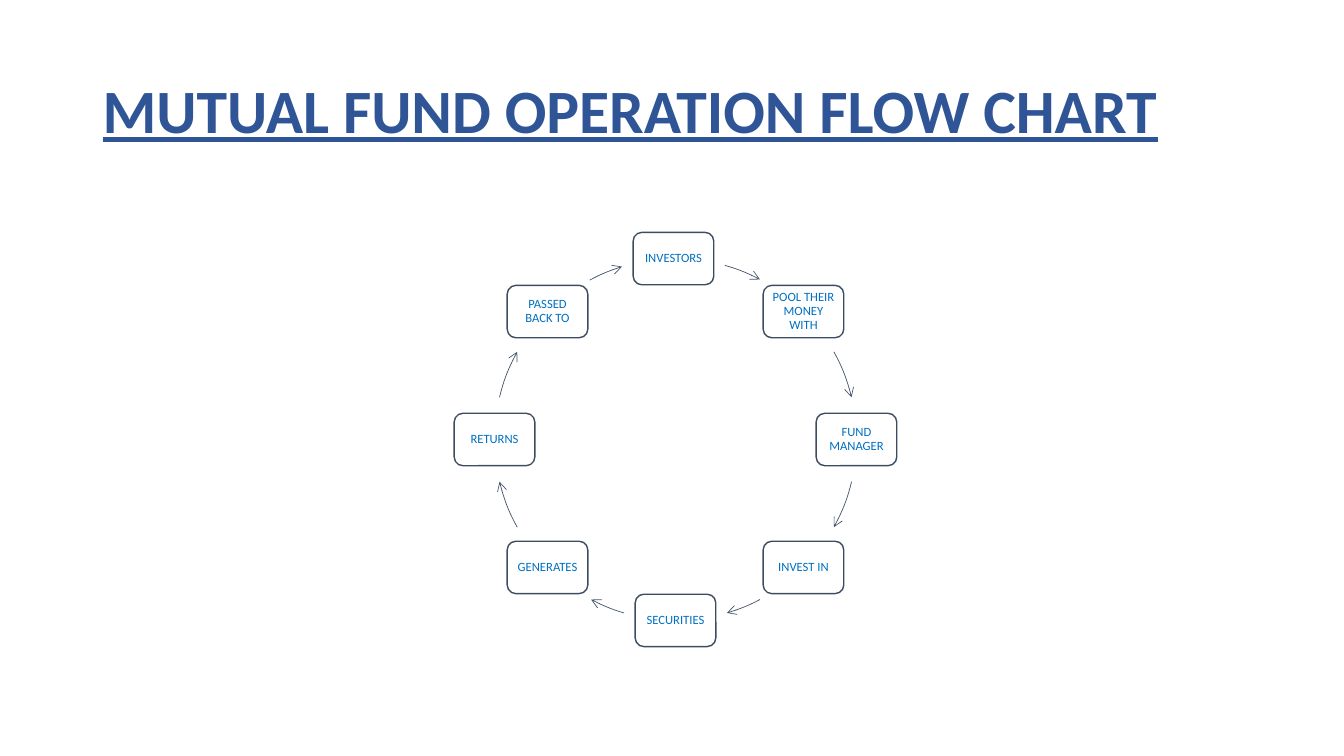
from dataclasses import dataclass
from math import cos, radians, sin

from lxml import etree
from pptx import Presentation
from pptx.dml.color import RGBColor
from pptx.enum import shapes, text
from pptx.oxml import ns
from pptx.util import Inches, Pt

COLORS = {"title": "2F5597", "label": "0070C0", "box": "FFFFFF",
          "outline": "3E4C60", "arrow": "44546A"}
FONT = "Calibri"
CENTER_X, CENTER_Y, RADIUS = 6.7, 4.36, 1.795
BOX_W, BOX_H = 0.8, 0.52


@dataclass(frozen=True)
class Step:
    """A stage of the cycle; angles are clockwise degrees from the top."""
    label: str
    arrow_start: float
    arrow_end: float
    shift: float = 0


STEPS = [
    Step("INVESTORS", 15.8, 27.8, shift=-0.02),
    Step("POOL THEIR MONEY WITH", 61, 76.5),
    Step("FUND MANAGER", 103.5, 119),
    Step("INVEST IN", 152.2, 163.5),
    Step("SECURITIES", 196.5, 207.8),
    Step("GENERATES", 241, 256.5),
    Step("RETURNS", 283.5, 299),
    Step("PASSED BACK TO", 331.7, 342.8),
]


def color(name: str) -> RGBColor:
    return RGBColor.from_string(COLORS[name])


def write(shape, wording: str, *, size: float, ink: str, bold: bool = False,
          underline: bool = False, align=text.PP_ALIGN.LEFT,
          inset_x: float = 0.1, inset_y: float = 0.05) -> None:
    frame = shape.text_frame
    frame.word_wrap = True
    frame.vertical_anchor = text.MSO_ANCHOR.MIDDLE
    frame.margin_left = frame.margin_right = Inches(inset_x)
    frame.margin_top = frame.margin_bottom = Inches(inset_y)
    paragraph = frame.paragraphs[0]
    paragraph.alignment = align
    paragraph.line_spacing = 0.9
    run = paragraph.add_run()
    run.text = wording
    run.font.name, run.font.size = FONT, Pt(size)
    run.font.bold, run.font.underline = bold, underline
    run.font.color.rgb = color(ink)


def draw_box(slide, step: Step, angle: float) -> None:
    x = CENTER_X + RADIUS * sin(radians(angle)) + step.shift
    y = CENTER_Y - RADIUS * cos(radians(angle))
    box = slide.shapes.add_shape(
        shapes.MSO_SHAPE.ROUNDED_RECTANGLE, Inches(x - BOX_W / 2),
        Inches(y - BOX_H / 2), Inches(BOX_W), Inches(BOX_H))
    box.shadow.inherit = False
    box.fill.solid()
    box.fill.fore_color.rgb = color("box")
    box.line.color.rgb = color("outline")
    box.line.width = Pt(1)
    write(box, step.label, size=9, ink="label", align=text.PP_ALIGN.CENTER,
          inset_x=0.04, inset_y=0.04)


def draw_arrow(slide, step: Step) -> None:
    arc = slide.shapes.add_shape(
        shapes.MSO_SHAPE.ARC, Inches(CENTER_X - RADIUS),
        Inches(CENTER_Y - RADIUS), Inches(2 * RADIUS), Inches(2 * RADIUS))
    # Arc angles start at the right; one degree is 60000 units, or 0.6 here
    for index, angle in enumerate((step.arrow_start, step.arrow_end)):
        arc.adjustments[index] = (angle - 90) % 360 * 0.6
    arc.shadow.inherit = False
    arc.fill.background()
    arc.line.color.rgb = color("arrow")
    arc.line.width = Pt(0.5)
    etree.SubElement(arc.line._get_or_add_ln(), ns.qn("a:tailEnd"), type="arrow")


def main() -> None:
    deck = Presentation()
    deck.slide_width, deck.slide_height = Inches(13.33), Inches(7.5)
    slide = deck.slides.add_slide(deck.slide_layouts[6])

    # Heading
    heading = slide.shapes.add_textbox(
        Inches(0.92), Inches(0.4), Inches(11.5), Inches(1.45))
    write(heading, "MUTUAL FUND OPERATION FLOW CHART", size=44, ink="title",
          bold=True, underline=True)

    # Cycle of steps, evenly spaced around the ring
    for position, step in enumerate(STEPS):
        draw_box(slide, step, position * 360 / len(STEPS))
        draw_arrow(slide, step)

    deck.save("out.pptx")


if __name__ == "__main__":
    main()
